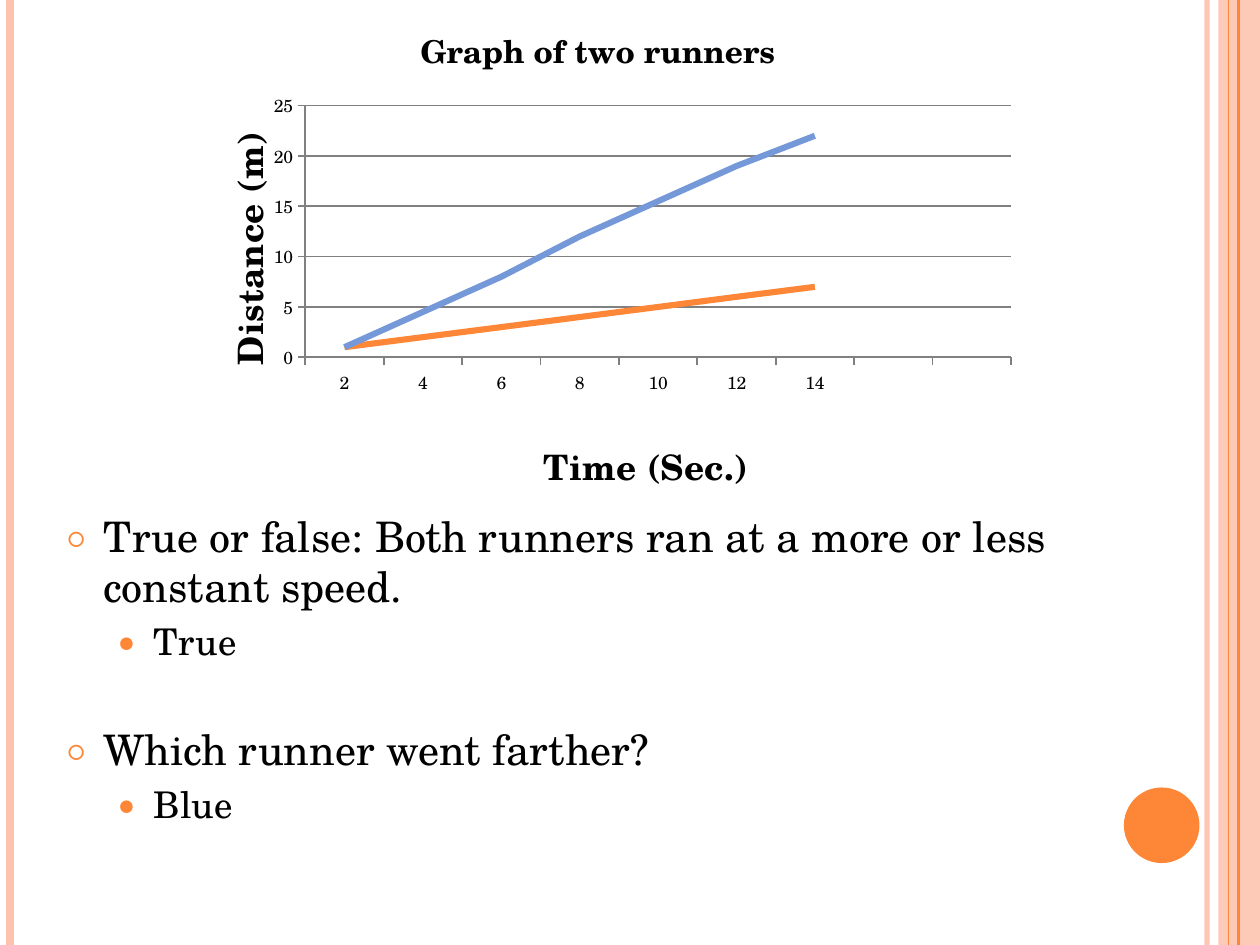
from lxml.etree import SubElement
from pptx import Presentation
from pptx.chart.data import CategoryChartData
from pptx.dml.color import RGBColor
from pptx.enum.chart import XL_CHART_TYPE, XL_TICK_MARK
from pptx.enum.shapes import MSO_CONNECTOR, MSO_SHAPE
from pptx.enum.text import MSO_ANCHOR, MSO_AUTO_SIZE
from pptx.oxml.ns import qn
from pptx.util import Inches, Pt

FONT = "TeX Gyre Schola"
BLACK = RGBColor(0x00, 0x00, 0x00)
ORANGE = RGBColor(0xFE, 0x86, 0x37)
PEACH = RGBColor(0xFE, 0xC3, 0xAE)
BLUE = RGBColor(0x75, 0x98, 0xD9)
GRAY = RGBColor(0x80, 0x80, 0x80)


def write(text, para, size, bold=False, level=0, before=None, bullet=None, scale=70):
    run = para.add_run()
    run.text = text
    run.font.name = FONT
    run.font.size = Pt(size)
    run.font.bold = bold
    run.font.color.rgb = BLACK
    if bullet:
        para.level = level
        para.space_before = Pt(before)
        props = para._p.get_or_add_pPr()
        props.set("marL", str(Inches(0.3 + 0.4 * level)))
        props.set("indent", str(Inches(-0.3)))
        tint = SubElement(props, qn("a:buClr"))
        SubElement(tint, qn("a:srgbClr"), val=str(ORANGE))
        SubElement(props, qn("a:buSzPct"), val=str(scale * 1000))
        SubElement(props, qn("a:buFont"), typeface=FONT)
        SubElement(props, qn("a:buChar"), char=bullet)


def place(node, index, **spots):
    for old in node.findall(qn("c:layout")):
        node.remove(old)
    layout = SubElement(node, qn("c:layout"))
    node.insert(index, layout)
    manual = SubElement(layout, qn("c:manualLayout"))
    if "w" in spots:
        SubElement(manual, qn("c:layoutTarget"), val="inner")
    for mode in ("xMode", "yMode"):
        SubElement(manual, qn("c:" + mode), val="edge")
    for key, value in spots.items():
        SubElement(manual, qn("c:" + key), val=str(value))


prs = Presentation()
prs.slide_width = Inches(10)
prs.slide_height = Inches(7.5)
slide = prs.slides.add_slide(prs.slide_layouts[1])
shapes = slide.shapes
title = shapes.title._element
title.getparent().remove(title)

band = shapes.add_shape(MSO_SHAPE.RECTANGLE, Inches(9.67), 0, Inches(0.33), Inches(7.5))
dot = shapes.add_shape(MSO_SHAPE.OVAL, Inches(8.92), Inches(6.25), Inches(0.6), Inches(0.6))
for shape, color in ((band, PEACH), (dot, ORANGE)):
    shape.shadow.inherit = False
    shape.fill.solid()
    shape.fill.fore_color.rgb = color
    shape.line.fill.background()
tint = band._element.spPr.find(".//" + qn("a:srgbClr"))
SubElement(tint, qn("a:alpha"), val="87000")

stripes = [(9.58, PEACH, 3), (0.08, PEACH, 4.5), (9.83, ORANGE, 1.5), (9.75, ORANGE, 0.75)]
for left, color, width in stripes:
    x = Inches(left)
    stripe = shapes.add_connector(MSO_CONNECTOR.STRAIGHT, x, 0, x, Inches(7.5))
    stripe.line.color.rgb = color
    stripe.line.width = Pt(width)
    SubElement(stripe._element.spPr, qn("a:effectLst"))
    if left == 9.58:
        tint = stripe._element.spPr.find(".//" + qn("a:srgbClr"))
        SubElement(tint, qn("a:alpha"), val="93000")
    if left == 9.75:
        band._element.addprevious(stripe._element)
        stripe._element.addprevious(band._element)

body = slide.placeholders[1]
body.left, body.top = Inches(0.42), Inches(4)
body.width, body.height = Inches(9.33), Inches(4.08)
frame = body.text_frame
frame.word_wrap = True
frame.auto_size = MSO_AUTO_SIZE.NONE
frame.vertical_anchor = MSO_ANCHOR.TOP
quiz = [
    ("True or false: Both runners ran at a more or less constant speed.", "True", 6),
    ("Which runner went farther?", "Blue", 35),
]
para = frame.paragraphs[0]
for ask, reply, gap in quiz:
    write(ask, para, 24, before=gap, bullet="○")
    write(reply, frame.add_paragraph(), 21, level=1, before=4.2, bullet="●", scale=80)
    if ask != quiz[-1][0]:
        para = frame.add_paragraph()

data = CategoryChartData()
data.categories = [str(sec) for sec in range(2, 15, 2)] + ["", ""]
data.add_series("Series 1", [1, 2, 3, 4, 5, 6, 7, None, None])
data.add_series("Series 2", [1, 4.5, 8, 12, 15.5, 19, 22, None, None])
chart = shapes.add_chart(
    XL_CHART_TYPE.LINE, Inches(1.33), 0, Inches(6.83), Inches(4), data
).chart
chart.has_legend = False
chart.font.name = FONT
chart.font.size = Pt(10)
chart.font.color.rgb = BLACK
write("Graph of two runners", chart.chart_title.text_frame.paragraphs[0], 18, bold=True)
chart.chart_title.include_in_layout = True
chart.chart_title._element.find(qn("c:overlay")).set("val", "1")
plot = chart._chartSpace.find(".//" + qn("c:plotArea"))
place(plot, 0, x=0.16, y=0.21, w=0.82, h=0.5)

for axis, label, x, y in (
    (chart.category_axis, "Time (Sec.)", 0.43, 0.85),
    (chart.value_axis, "Distance (m)", 0.05, 0.25),
):
    write(label, axis.axis_title.text_frame.paragraphs[0], 20, bold=True)
    place(axis.axis_title._element, 1, x=x, y=y)
    axis.major_tick_mark = XL_TICK_MARK.OUTSIDE
    axis.minor_tick_mark = XL_TICK_MARK.NONE
    axis.format.line.color.rgb = GRAY
    axis.format.line.width = Pt(1)
scale = chart.value_axis
scale.minimum_scale, scale.maximum_scale, scale.major_unit = 0, 25, 5
scale.has_major_gridlines = True
scale.major_gridlines.format.line.color.rgb = GRAY
scale.major_gridlines.format.line.width = Pt(1)

for series, color in zip(chart.plots[0].series, (ORANGE, BLUE)):
    series.smooth = False
    series.format.line.color.rgb = color
    series.format.line.width = Pt(3.5)

shapes._spTree.append(body._element)

prs.save("out.pptx")
